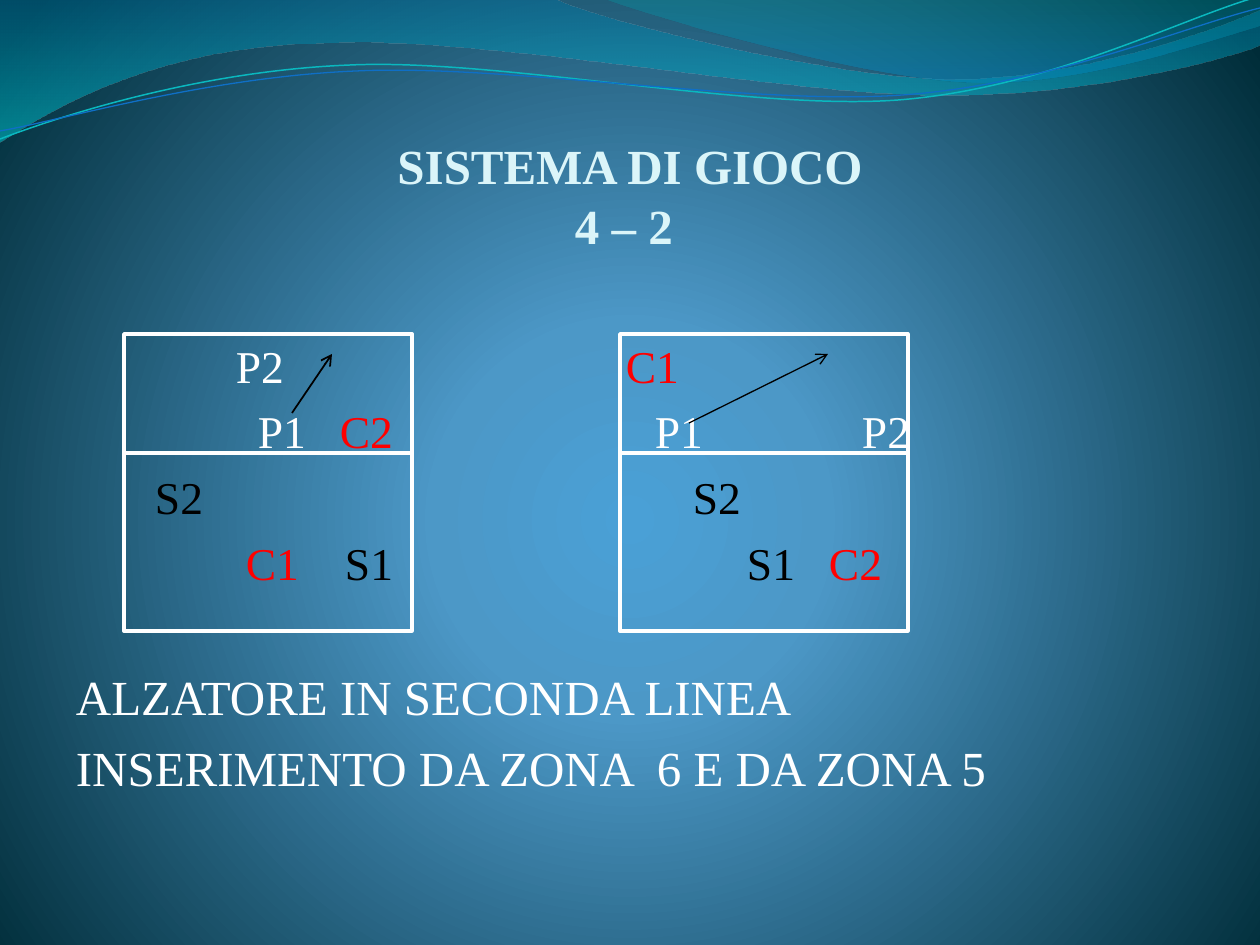
import pptx
import pptx.util
import pptx.oxml
import pptx.oxml.ns
import pptx.dml.color
import pptx.enum.shapes
import pptx.enum.text

PX = 914400 / 126
FONT = "Times New Roman"
NS = pptx.oxml.ns.nsdecls("a")
COLORS = {"white": "FFFFFF", "black": "000000", "red": "FF0000", "title": "DBF5F9",
          "teal_line": "0AB8BF", "blue_line": "0F6FC6"}
ROLE_COLORS = {"P": "white", "S": "black", "C": "red"}
RADIAL = '<a:path path="circle"><a:fillToRect l="10000" t="110000" r="10000" b="100000"/></a:path>'
VERTICAL = '<a:lin ang="5400000" scaled="0"/>'
BACKGROUND = [(0, "4AA0D6", 100), (25, "4C98C7", 100), (100, "002C38", 100)]

WAVES = [
    ([(0, 0), (554, -1), (600, 21, 837, 79, 955, 79), (1075, 79, 1207, 33, 1260, 11),
      (1261, 45), (1239, 55, 1096, 96, 940, 95), (784, 95, 481, 35, 324, 43),
      (163, 45, 58, 105, -1, 142)],
     [(0, "0074A1", 45), (100, "00C6CF", 55)]),
    ([(604, -1), (641, 14, 859, 78, 969, 82), (1079, 87, 1211, 40, 1260, 26), (1260, 0)],
     [(0, "00A1A9", 30), (80, "008BBF", 45)]),
]
STRANDS = [
    ([(0, 139), (60, 116, 199, 71, 349, 65), (498, 58, 747, 111, 898, 100),
      (1050, 88, 1182, 18, 1257, -3)], "teal_line", 0.85),
    ([(0, 131), (59, 121, 207, 77, 357, 71), (508, 64, 752, 106, 903, 95),
      (1053, 84, 1186, 26, 1260, 8)], "blue_line", 0.75),
]
COURT_LEFTS = [124, 620]
COURT_TOP, COURT_WIDTH, COURT_HEIGHT, ATTACK_LINE = 334, 288, 297, 453
BODY_LEFT, BODY_INSET = 63, 13
ROWS = [
    [("P2", 236), ("C1", 626)],
    [("P1", 258), ("C2", 340), ("P1", 655), ("P2", 862)],
    [("S2", 155), ("S2", 693)],
    [("C1", 246), ("S1", 345), ("S1", 747), ("C2", 829)],
]
MOVES = [((292, 413), (332, 354), 1), ((689, 423), (828, 354), 0.75)]
NOTES = [("ALZATORE IN SECONDA LINEA", 44), ("INSERIMENTO DA ZONA  6 E DA ZONA 5", 7.25)]


def px(n):
    return pptx.util.Emu(round(n * PX))


def rgb(name):
    return pptx.dml.color.RGBColor.from_string(COLORS[name])


def set_gradient(fill, parent, stops, direction):
    fill.gradient()
    old = next(parent.iter(pptx.oxml.ns.qn("a:gradFill")))
    gs = "".join(f'<a:gs pos="{pos * 1000}"><a:srgbClr val="{color}">'
                 f'<a:alpha val="{alpha * 1000}"/></a:srgbClr></a:gs>'
                 for pos, color, alpha in stops)
    new = pptx.oxml.parse_xml(f'<a:gradFill {NS} rotWithShape="1">'
                              f'<a:gsLst>{gs}</a:gsLst>{direction}</a:gradFill>')
    old.getparent().replace(old, new)


def set_line(sp, color, width):
    sp.line.color.rgb = rgb(color)
    sp.line.width = pptx.util.Pt(width)


def add_curve(s, segments, closed):
    points = [(px(x), px(y)) for seg in segments for x, y in zip(seg[::2], seg[1::2])]
    builder = s.shapes.build_freeform(*points[0], scale=1.0)
    builder.add_line_segments(points[1:], close=closed)
    sp = builder.convert_to_shape()
    sp.shadow.inherit = False
    vertices = iter(list(sp.element.iter(pptx.oxml.ns.qn("a:lnTo"))))
    for seg in segments[1:]:
        first = next(vertices)
        if len(seg) == 2:
            continue
        bezier = pptx.oxml.parse_xml(f"<a:cubicBezTo {NS}/>")
        first.addprevious(bezier)
        for vertex in (first, next(vertices), next(vertices)):
            bezier.append(vertex[0])
            vertex.getparent().remove(vertex)
    return sp


def add_wave(s, segments, stops):
    sp = add_curve(s, segments, True)
    set_gradient(sp.fill, sp.element, stops, VERTICAL)
    sp.line.fill.background()


def add_strand(s, segments, color, width):
    sp = add_curve(s, segments, False)
    sp.fill.background()
    set_line(sp, color, width)


def add_line(s, start, end, color, width, arrow=False):
    line = s.shapes.add_connector(pptx.enum.shapes.MSO_CONNECTOR.STRAIGHT,
                                  *map(px, start + end))
    set_line(line, color, width)
    if arrow:
        ln = line.element.spPr.find(pptx.oxml.ns.qn("a:ln"))
        ln.append(pptx.oxml.parse_xml(f'<a:tailEnd {NS} type="arrow"/>'))
    line.element.spPr.append(pptx.oxml.parse_xml(f"<a:effectLst {NS}/>"))


def add_court(s, left):
    sp = s.shapes.add_shape(pptx.enum.shapes.MSO_SHAPE.RECTANGLE, px(left), px(COURT_TOP),
                            px(COURT_WIDTH), px(COURT_HEIGHT))
    sp.shadow.inherit = False
    sp.fill.background()
    set_line(sp, "white", 2)


def add_text_frame(s, left, top, width, height, inset_left=0, inset_top=0):
    tf = s.shapes.add_textbox(px(left), px(top), px(width), px(height)).text_frame
    tf.word_wrap = True
    tf.margin_left, tf.margin_top = px(inset_left), px(inset_top)
    tf.margin_right = tf.margin_bottom = 0
    return tf


def add_run(p, text, size, color, bold=False):
    r = p.add_run()
    r.text = text
    r.font.name = FONT
    r.font.size = pptx.util.Pt(size)
    r.font.bold = bold
    r.font.color.rgb = rgb(color)


def add_title(s):
    tf = add_text_frame(s, 63, 97, 1134, 157)
    tf.vertical_anchor = pptx.enum.text.MSO_ANCHOR.BOTTOM
    p = tf.paragraphs[0]
    p.alignment = pptx.enum.text.PP_ALIGN.CENTER
    p.line_spacing = pptx.util.Pt(34)
    add_run(p, "SISTEMA DI GIOCO", 28, "title", True)
    p.add_line_break()
    add_run(p, "4 – 2 ", 28, "title", True)


def add_player_row(p, row):
    tabs = "".join(f'<a:tab pos="{px(x - BODY_LEFT - BODY_INSET)}" algn="l"/>' for _, x in row)
    p._p.get_or_add_pPr().append(pptx.oxml.parse_xml(f"<a:tabLst {NS}>{tabs}</a:tabLst>"))
    for name, _ in row:
        add_run(p, "\t" + name, 26, ROLE_COLORS[name[0]])


def add_body(s):
    tf = add_text_frame(s, BODY_LEFT, 267, 1134, 605, BODY_INSET, 71)
    for i, row in enumerate(ROWS):
        p = tf.add_paragraph() if i else tf.paragraphs[0]
        p.space_before = pptx.util.Pt(6.3 if i else 0)
        add_player_row(p, row)
    for text, gap in NOTES:
        p = tf.add_paragraph()
        p.space_before = pptx.util.Pt(gap)
        add_run(p, text, 28, "white")


def main():
    prs = pptx.Presentation()
    prs.slide_width, prs.slide_height = px(1260), px(945)
    s = prs.slides.add_slide(prs.slide_layouts[6])
    set_gradient(s.background.fill, s.element, BACKGROUND, RADIAL)
    for wave in WAVES:
        add_wave(s, *wave)
    for strand in STRANDS:
        add_strand(s, *strand)
    add_title(s)
    add_body(s)
    for left in COURT_LEFTS:
        add_court(s, left)
    for left in COURT_LEFTS:
        add_line(s, (left, ATTACK_LINE), (left + COURT_WIDTH, ATTACK_LINE), "white", 2.25)
    for start, end, width in MOVES:
        add_line(s, start, end, "black", width, arrow=True)
    prs.save("out.pptx")


if __name__ == "__main__":
    main()
